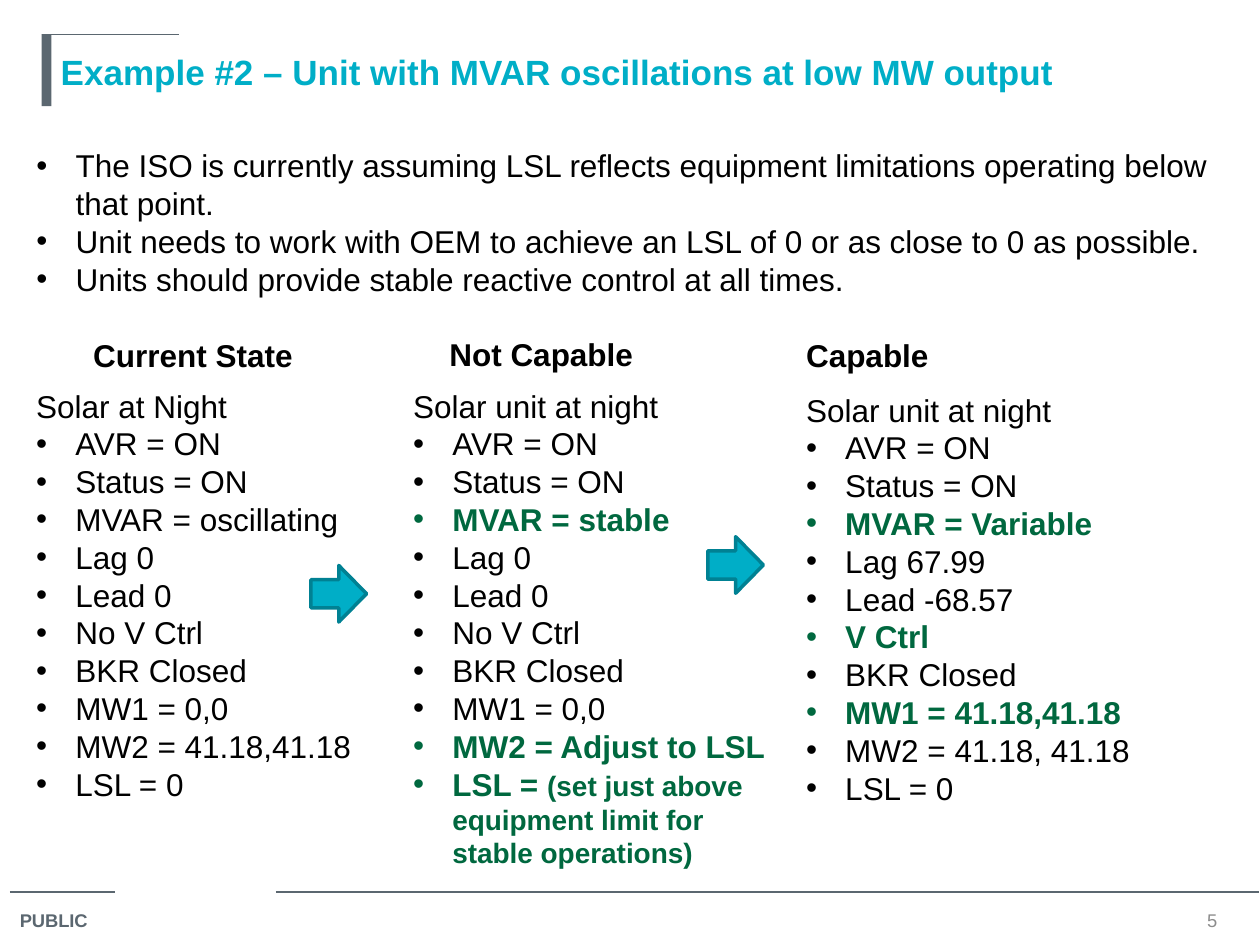
from lxml.etree import SubElement
from pptx import Presentation
from pptx.dml.color import RGBColor
from pptx.enum.shapes import MSO_CONNECTOR, MSO_SHAPE
from pptx.enum.text import MSO_ANCHOR, MSO_AUTO_SIZE, PP_ALIGN
from pptx.oxml.ns import qn
from pptx.util import Cm, Pt

BLACK = RGBColor(0x00, 0x00, 0x00)
SLATE = RGBColor(0x5B, 0x67, 0x70)
GRAY = RGBColor(0x8C, 0x8C, 0x8C)
CYAN = RGBColor(0x00, 0xAE, 0xC7)
TEAL = RGBColor(0x00, 0x81, 0x93)
GREEN = RGBColor(0x00, 0x68, 0x3F)

POINTS = [
    "The ISO is currently assuming LSL reflects equipment limitations operating below that point.",
    "Unit needs to work with OEM to achieve an LSL of 0 or as close to 0 as possible.",
    "Units should provide stable reactive control at all times.",
]

# Each state: column box, heading offset, heading, lead line, items, changed items
STATES = [
    ((0.48, 7.67, 7.98, 10.26), (1.15, -1.02), "Current State", "Solar at Night",
     ["AVR = ON", "Status = ON", "MVAR = oscillating", "Lag 0", "Lead 0", "No V Ctrl",
      "BKR Closed", "MW1 = 0,0", "MW2 = 41.18,41.18", "LSL = 0"], ()),
    ((8.08, 7.67, 7.92, 11.63), (0.73, -1.04), "Not Capable", "Solar unit at night",
     ["AVR = ON", "Status = ON", "MVAR = stable", "Lag 0", "Lead 0", "No V Ctrl",
      "BKR Closed", "MW1 = 0,0", "MW2 = Adjust to LSL", "LSL = "], (2, 8, 9)),
    ((16, 7.75, 8.1, 10.26), (0, -1.1), "Capable", "Solar unit at night",
     ["AVR = ON", "Status = ON", "MVAR = Variable", "Lag 67.99", "Lead -68.57", "V Ctrl",
      "BKR Closed", "MW1 = 41.18,41.18", "MW2 = 41.18, 41.18", "LSL = 0"], (2, 5, 7)),
]
LIMIT = "(set just above equipment limit for stable operations)"
ARROWS = [(6.27, 11.4, 1.12, 1.14), (14.27, 10.82, 1.12, 1.14)]


def place(shape, box):
    shape.left, shape.top, shape.width, shape.height = map(Cm, box)


def add_run(para, text, size=18, color=BLACK, bold=False):
    run = para.add_run()
    run.text = text
    font = run.font
    font.name, font.size, font.bold = "Arial", Pt(size), bold
    font.color.rgb = color


def add_bullet(para):
    para.space_before = Pt(0)
    props = para._p.get_or_add_pPr()
    props.set("marL", str(Cm(0.79)))
    props.set("indent", str(-Cm(0.79)))
    SubElement(props, qn("a:buFont")).set("typeface", "Arial")
    SubElement(props, qn("a:buChar")).set("char", "•")


def add_text(slide, box, wrap=True):
    frame = slide.shapes.add_textbox(*map(Cm, box)).text_frame
    frame.word_wrap = wrap
    return frame


def add_line(slide, x, y, end):
    line = slide.shapes.add_connector(
        MSO_CONNECTOR.STRAIGHT, Cm(x), Cm(y), Cm(end), Cm(y))
    line.line.color.rgb = SLATE
    line.line.width = Pt(0.75)
    SubElement(line._element.spPr, qn("a:effectLst"))


def add_footer(slide, box):
    x, y, w, h = box
    add_line(slide, x, y, x + 2.11)
    add_line(slide, x + 5.36, y, x + w)
    label = add_text(slide, (x - 0.05, y + 0.23, 1.96, 0.71), wrap=False)
    add_run(label.paragraphs[0], "PUBLIC", 10.5, SLATE, True)
    number = add_text(slide, (x + w - 1.67, y + 0.26, 1.47, 0.61))
    number.vertical_anchor = MSO_ANCHOR.MIDDLE
    number.paragraphs[0].alignment = PP_ALIGN.CENTER
    add_run(number.paragraphs[0], "5", 10.5, GRAY)


def add_title(slide, box):
    x, y, w, h = box
    bar = slide.shapes.add_shape(MSO_SHAPE.RECTANGLE, *map(Cm, (x, y, 0.2, 1.45)))
    bar.shadow.inherit = False
    bar.fill.solid()
    bar.fill.fore_color.rgb = SLATE
    bar.line.fill.background()
    add_line(slide, x, y, x + 2.77)
    title = slide.shapes.title
    place(title, (x + 0.13, y + 0.2, w - 0.13, h - 0.2))
    frame = title.text_frame
    frame.auto_size = MSO_AUTO_SIZE.NONE
    frame.vertical_anchor = MSO_ANCHOR.TOP
    frame.paragraphs[0].alignment = PP_ALIGN.LEFT
    add_run(frame.paragraphs[0], "Example #2 – Unit with MVAR oscillations at low MW output",
            20, CYAN, True)


def add_points(slide, box):
    body = slide.placeholders[1]
    place(body, box)
    frame = body.text_frame
    frame.auto_size = MSO_AUTO_SIZE.NONE
    for i, text in enumerate(POINTS):
        para = frame.add_paragraph() if i else frame.paragraphs[0]
        add_bullet(para)
        add_run(para, text)


def add_state(slide, box, shift, head, lead, items, changed):
    x, y, w, h = box
    top = add_text(slide, (x + shift[0], y + shift[1], 5.05, 1.02))
    add_run(top.paragraphs[0], head, bold=True)
    frame = add_text(slide, box)
    add_run(frame.paragraphs[0], lead)
    for i, text in enumerate(items):
        para = frame.add_paragraph()
        add_bullet(para)
        new = i in changed
        add_run(para, text, color=GREEN if new else BLACK, bold=new)
        if text == "LSL = ":
            add_run(para, LIMIT, 16, GREEN, True)


def add_arrow(slide, box):
    arrow = slide.shapes.add_shape(MSO_SHAPE.RIGHT_ARROW, *map(Cm, box))
    arrow.shadow.inherit = False
    arrow.fill.solid()
    arrow.fill.fore_color.rgb = CYAN
    arrow.line.color.rgb = TEAL
    arrow.line.width = Pt(2)


def main():
    deck = Presentation()
    deck.slide_width, deck.slide_height = Cm(25.4), Cm(19.05)
    slide = deck.slides.add_slide(deck.slide_layouts[1])
    add_footer(slide, (0.2, 17.98, 25.17, 1.07))
    add_title(slide, (0.84, 0.69, 23.63, 1.65))
    add_points(slide, (0.48, 2.82, 24.69, 3.33))
    for state in STATES:
        add_state(slide, *state)
    for box in ARROWS:
        add_arrow(slide, box)
    deck.save("out.pptx")


if __name__ == "__main__":
    main()
